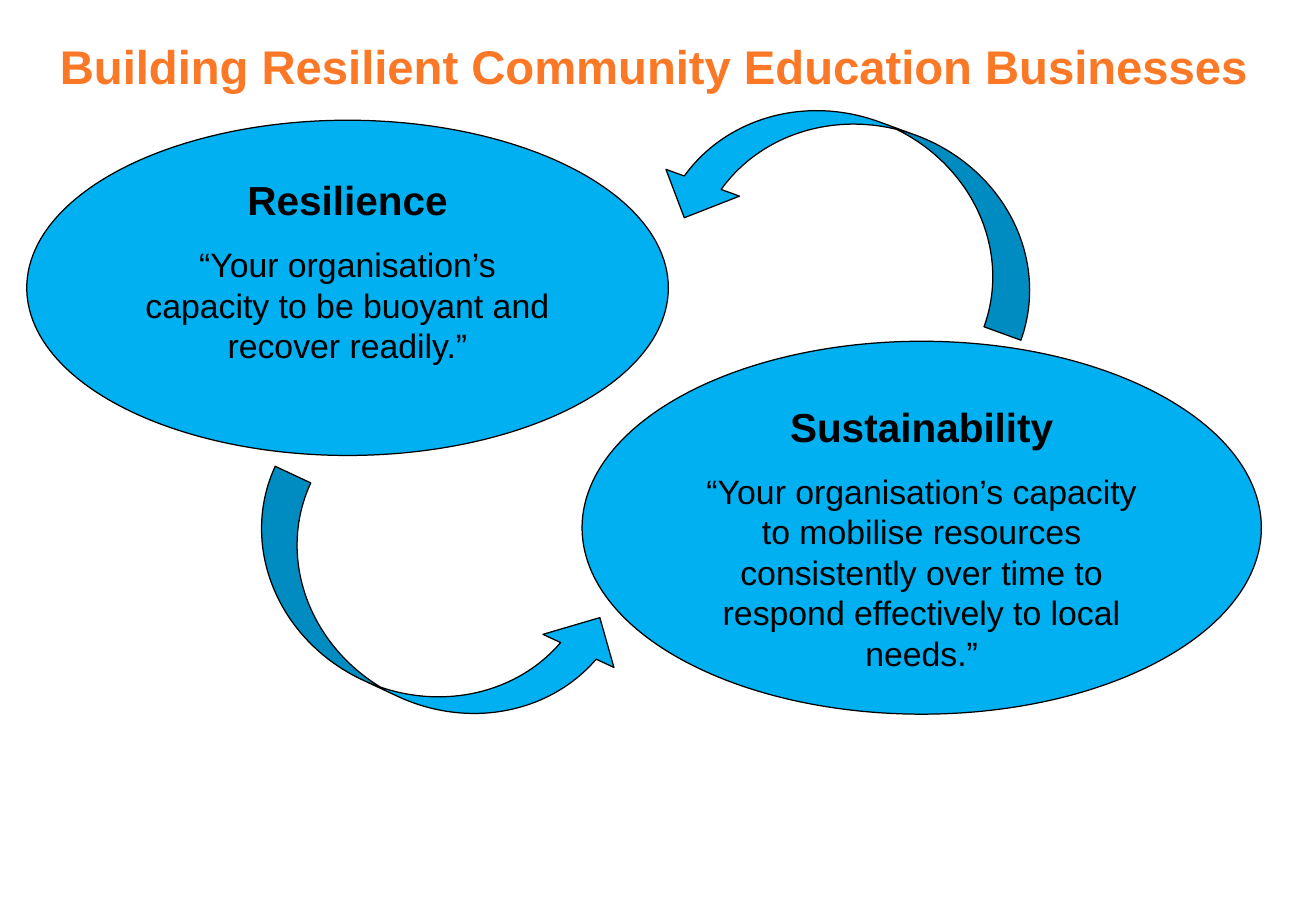
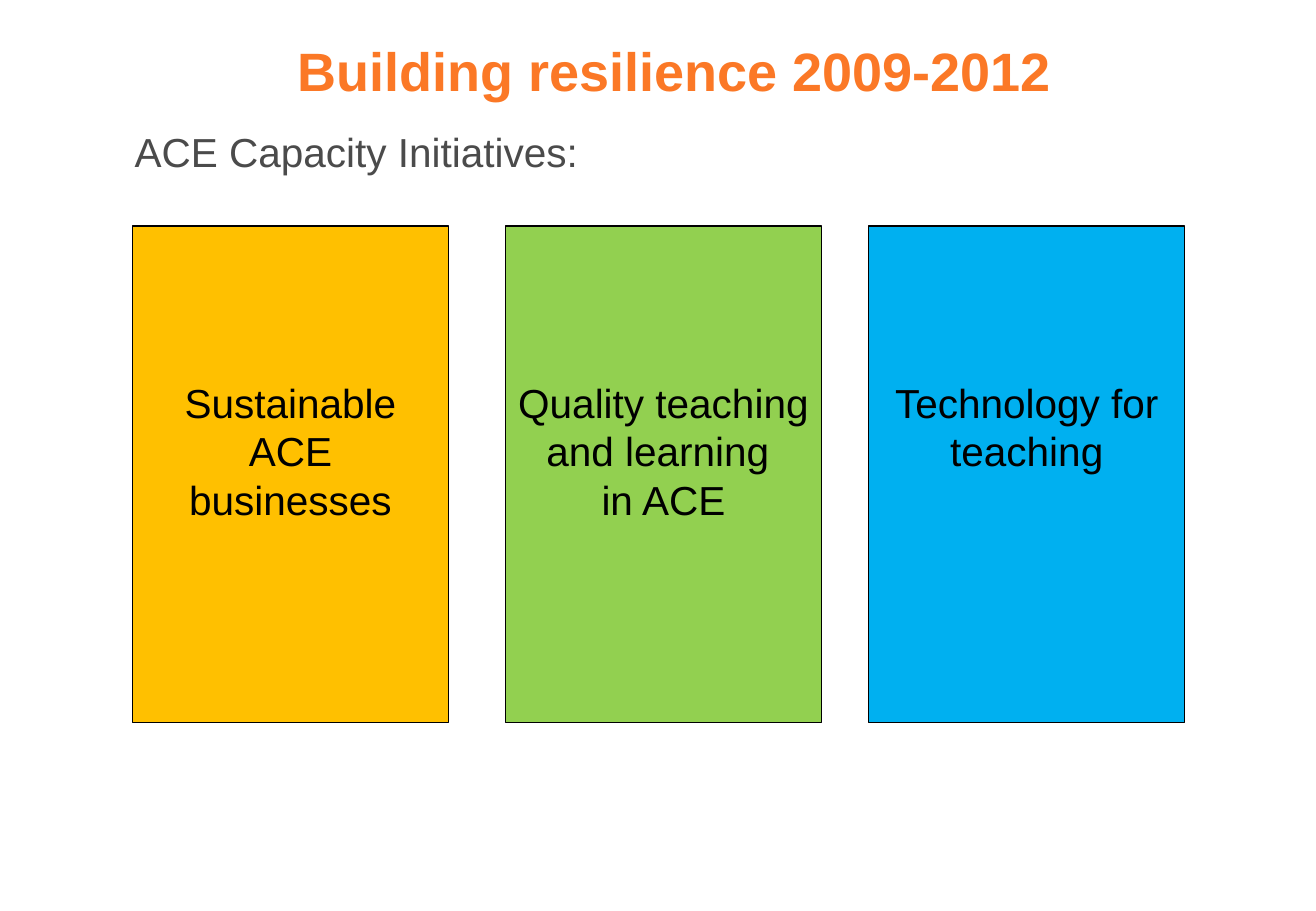
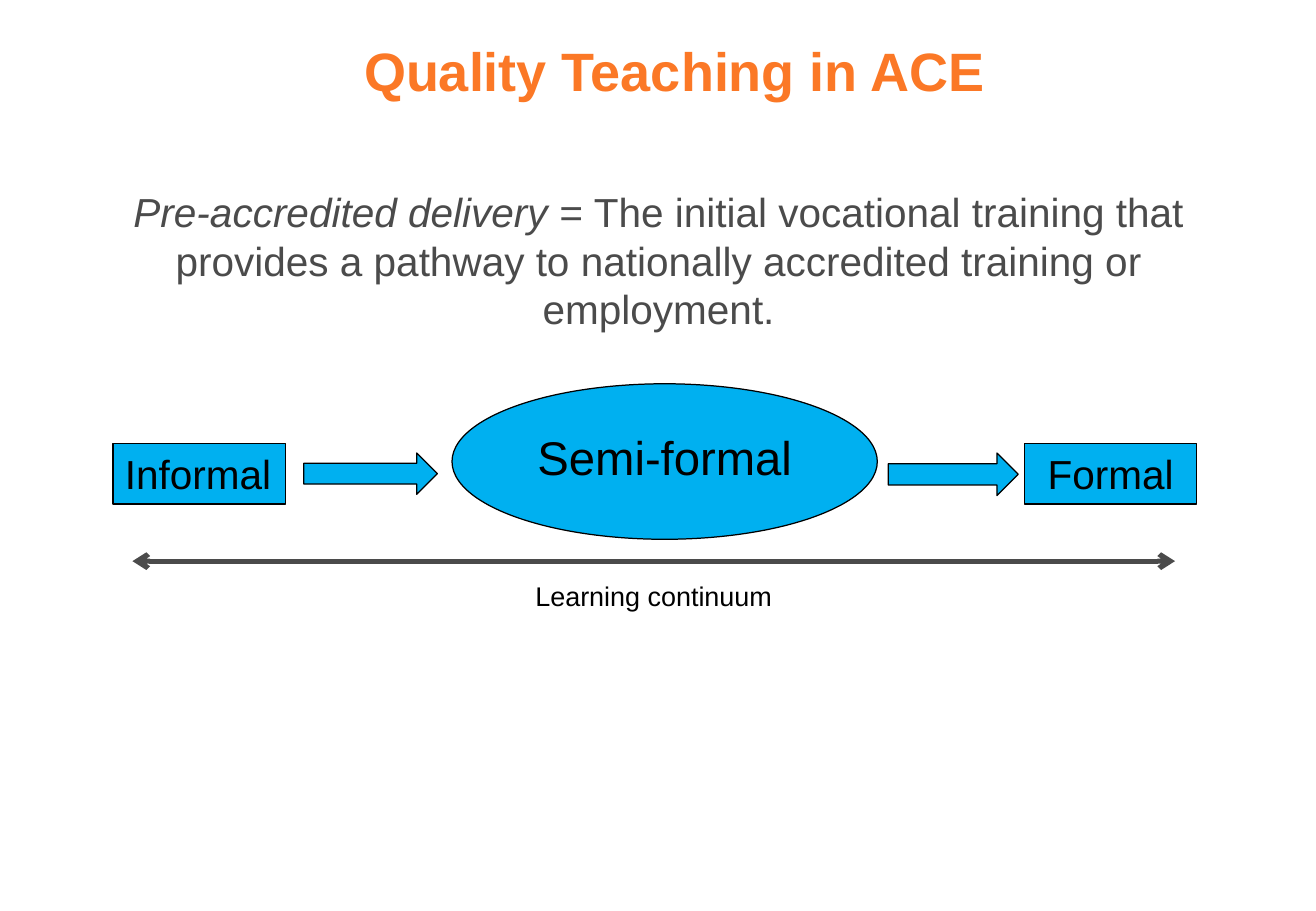
import pptx
import pptx.util
import pptx.dml.color
import pptx.enum.shapes
import pptx.enum.text
import pptx.oxml.ns
import lxml.etree

Inches = pptx.util.Inches
Pt = pptx.util.Pt
SHAPE = pptx.enum.shapes.MSO_SHAPE
ALIGN = pptx.enum.text.PP_ALIGN

FONT = "Arial"
COLOURS = {
    "title": "FB7826",
    "body": "4B4B4B",
    "ink": "000000",
    "blue": "00B0F0",
    "amber": "FFC000",
    "green": "92D050",
}

# Boxes are (left, top, width, height) in inches.
WIDE_TITLE = (0.22, 0.26, 10.32, 0.62)
TITLE = (0.95, 0.26, 9.21, 0.62)

CONCEPTS = [
    ((0.22, 0.99, 5.28, 2.76), "Resilience",
     "“Your organisation’s capacity to be buoyant and recover readily.”"),
    ((4.79, 2.81, 5.59, 3.07), "Sustainability",
     "“Your organisation’s capacity to mobilise resources consistently "
     "over time to respond effectively to local needs.”"),
]
CYCLE_ARROWS = [((6.44, 0, 1.29, 3.27), 110), ((2.83, 3.48, 1.29, 3.27), 295)]

INITIATIVES = [
    (1.09, "amber", ["Sustainable ACE businesses"]),
    (4.16, "green", ["Quality teaching and learning ", "in ACE"]),
    (7.15, "blue", ["Technology for teaching"]),
]

DEFINITION = [
    "Pre-accredited delivery = ",
    "The initial vocational training that provides a pathway to nationally "
    "accredited training or employment.",
]
STAGES = [
    (0.93, "Informal", ALIGN.LEFT),
    (8.43, "Formal", ALIGN.CENTER),
]
STAGE_ARROWS = [(2.5, 3.73, 1.1, 0.34), (7.31, 3.73, 1.07, 0.35)]


def rgb(name):
    return pptx.dml.color.RGBColor.from_string(COLOURS[name])


def inches(box):
    return [Inches(length) for length in box]


def style_span(span, size, colour, bold=False, italic=False):
    span.font.name = FONT
    span.font.size = Pt(size)
    span.font.color.rgb = rgb(colour)
    span.font.bold = bold
    span.font.italic = italic


def write(shape, lines, size, colour="ink", align=ALIGN.CENTER, bold=False, top=0.05):
    """Fill a shape with one paragraph per line, starting `top` inches down."""
    frame = shape.text_frame
    frame.word_wrap = True
    frame.auto_size = pptx.enum.text.MSO_AUTO_SIZE.NONE
    frame.vertical_anchor = pptx.enum.text.MSO_ANCHOR.TOP
    frame.margin_left = frame.margin_right = Inches(0.1)
    frame.margin_top, frame.margin_bottom = Inches(top), Inches(0.05)
    frame.text = "\n".join(lines)
    for para in frame.paragraphs:
        para.alignment = align
        para.space_before = Pt(0)
        for span in para.runs:
            style_span(span, size, colour, bold)
    return frame


def add_page(deck, title, box=TITLE, size=32):
    page = deck.slides.add_slide(deck.slide_layouts[5])
    heading = page.shapes.title
    heading.left, heading.top, heading.width, heading.height = inches(box)
    write(heading, [title], size, "title", bold=True)
    return page


def add_filled(page, kind, box, fill="blue"):
    shape = page.shapes.add_shape(kind, *inches(box))
    shape.shadow.inherit = False
    shape.fill.solid()
    shape.fill.fore_color.rgb = rgb(fill)
    shape.line.color.rgb = rgb("ink")
    shape.line.width = Pt(0.75)
    return shape


def add_double_arrow(page, left, right, y):
    line = page.shapes.add_connector(
        pptx.enum.shapes.MSO_CONNECTOR.STRAIGHT, *inches((left, y, right, y)))
    line.line.color.rgb = rgb("body")
    line.line.width = Pt(3)
    stroke = line.line._get_or_add_ln()
    for end in ("a:headEnd", "a:tailEnd"):
        lxml.etree.SubElement(stroke, pptx.oxml.ns.qn(end), type="arrow")
    lxml.etree.SubElement(line._element.spPr, pptx.oxml.ns.qn("a:effectLst"))


def build_cycle(deck):
    page = add_page(deck, "Building Resilient Community Education Businesses",
                    WIDE_TITLE, 28)
    for box, name, quote in CONCEPTS:
        ellipse = add_filled(page, SHAPE.OVAL, box)
        frame = write(ellipse, [name, quote], 20)
        name_para, quote_para = frame.paragraphs
        style_span(name_para.runs[0], 24, "ink", bold=True)
        quote_para.space_before = Pt(12)
    for box, angle in CYCLE_ARROWS:
        add_filled(page, SHAPE.CURVED_RIGHT_ARROW, box).rotation = angle


def build_initiatives(deck):
    page = add_page(deck, "Building resilience 2009-2012")
    intro = page.shapes.add_textbox(*inches((1.01, 1, 9.37, 0.6)))
    write(intro, ["ACE Capacity Initiatives:"], 24, "body", ALIGN.LEFT)
    for left, fill, lines in INITIATIVES:
        panel = add_filled(page, SHAPE.RECTANGLE, (left, 1.86, 2.6, 4.09), fill)
        write(panel, lines, 24, top=1.25)


def build_continuum(deck):
    page = add_page(deck, "Quality Teaching in ACE")
    definition = page.shapes.add_textbox(*inches((0.93, 1.49, 8.98, 1.4)))
    term, meaning = DEFINITION
    para = write(definition, [term], 24, "body").paragraphs[0]
    para.runs[0].font.italic = True
    span = para.add_run()
    span.text = meaning
    style_span(span, 24, "body")

    add_double_arrow(page, 1.09, 9.67, 4.62)
    caption = page.shapes.add_textbox(*inches((4.28, 4.72, 2.2, 0.37)))
    write(caption, ["Learning continuum"], 16)

    middle = add_filled(page, SHAPE.OVAL, (3.72, 3.16, 3.5, 1.28))
    write(middle, ["Semi-formal"], 28, top=0.18)
    for left, name, align in STAGES:
        stage = add_filled(page, SHAPE.RECTANGLE, (left, 3.65, 1.42, 0.5))
        write(stage, [name], 24, align=align)
    for box in STAGE_ARROWS:
        add_filled(page, SHAPE.RIGHT_ARROW, box)


def main():
    deck = pptx.Presentation()
    deck.slide_width, deck.slide_height = Inches(10.83), Inches(7.5)
    build_cycle(deck)
    build_initiatives(deck)
    build_continuum(deck)
    deck.save("out.pptx")


if __name__ == "__main__":
    main()
